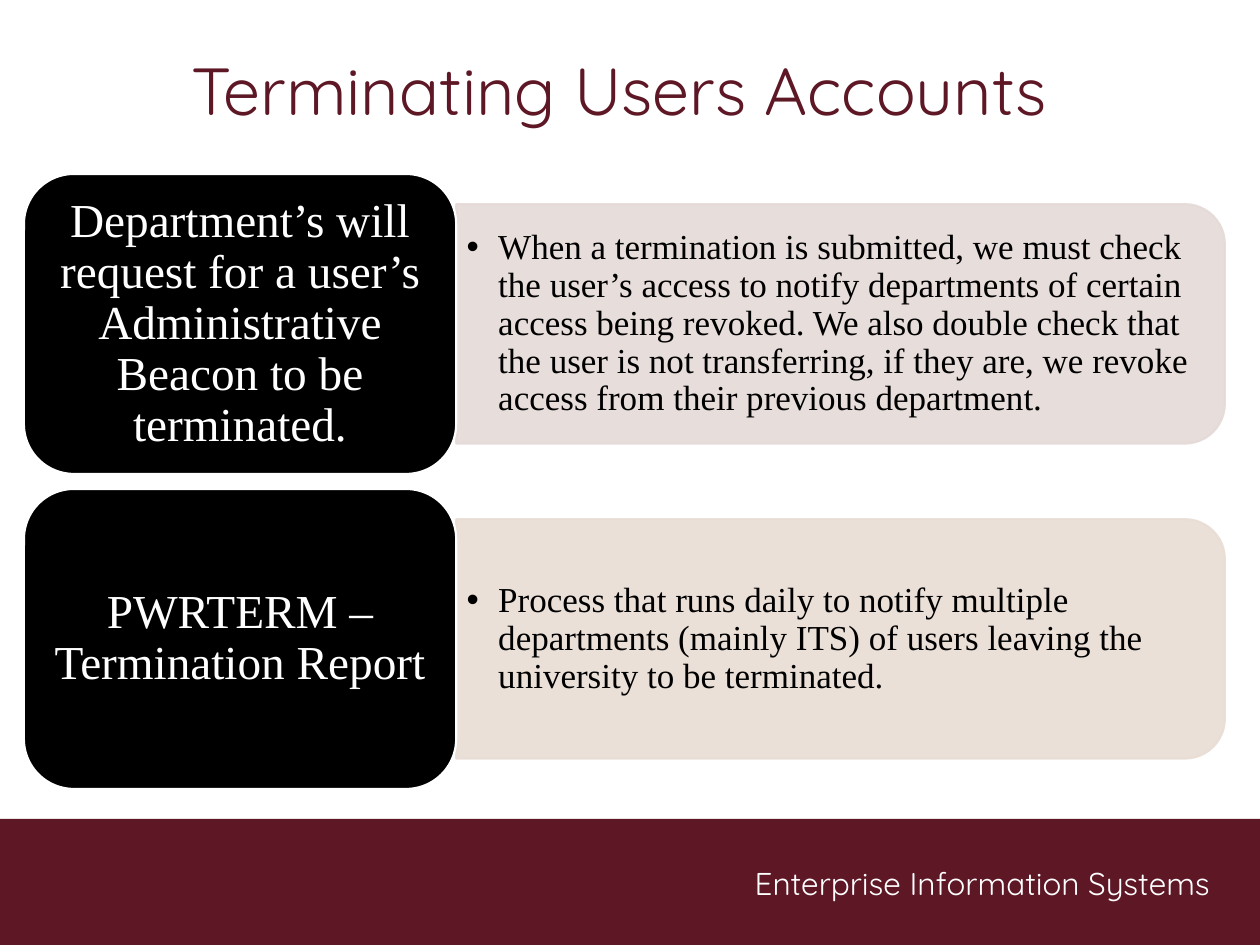
from lxml.etree import SubElement
from pptx import Presentation
from pptx.dml.color import RGBColor
from pptx.enum.shapes import MSO_SHAPE
from pptx.enum.text import MSO_ANCHOR, MSO_AUTO_SIZE, PP_ALIGN
from pptx.oxml.ns import qn
from pptx.util import Pt

TITLE = "Terminating Users Accounts"
FOOTER = "Enterprise Information Systems"
ROWS = [
    ("Department’s will request for a user’s Administrative Beacon to be terminated.",
     "When a termination is submitted, we must check the user’s access to notify "
     "departments of certain access being revoked. We also double check that the user is "
     "not transferring, if they are, we revoke access from their previous department.",
     "E5DAD8"),
    ("PWRTERM – Termination Report",
     "Process that runs daily to notify multiple departments (mainly ITS) of users "
     "leaving the university to be terminated.",
     "E9DDD4"),
]
MAROON, WHITE, BLACK = "5D1725", "FFFFFF", "000000"
HEADING_FONT, BODY_FONT = "Quicksand", "Times New Roman"
CARD_LEFT, CARD_TOP, CARD_WIDTH, CARD_HEIGHT = 13.7, 99.4, 247, 171.4
ROW_PITCH = 180
PANEL_WIDTH, PANEL_HEIGHT = 439.2, 136.8
LIST_WIDTH, LIST_HEIGHT = 432.7, 123.8


def color(value):
    return RGBColor.from_string(value)


def place(shape, left, top, width, height):
    shape.left, shape.top = Pt(left), Pt(top)
    shape.width, shape.height = Pt(width), Pt(height)


def add_block(page, kind, bounds, fill, line=None):
    block = page.shapes.add_shape(kind, *map(Pt, bounds))
    block.shadow.inherit = False
    block.fill.solid()
    block.fill.fore_color.rgb = color(fill)
    if line:
        block.line.color.rgb = color(line)
        block.line.width = Pt(1.25)
    else:
        block.line.fill.background()
    return block


def write(shape, text, font, size, ink, align, margins=(7.2, 3.6), spacing=None):
    frame = shape.text_frame
    frame.text = text
    frame.word_wrap = True
    frame.auto_size = MSO_AUTO_SIZE.NONE
    frame.vertical_anchor = MSO_ANCHOR.MIDDLE
    frame.margin_left = frame.margin_right = Pt(margins[0])
    frame.margin_top = frame.margin_bottom = Pt(margins[1])
    para = frame.paragraphs[0]
    para.alignment = align
    para.space_before = Pt(0)
    if spacing:
        para.line_spacing = spacing
    for span in para.runs:
        span.font.name, span.font.size = font, Pt(size)
        span.font.color.rgb = color(ink)
    return para


def add_bullet(para):
    properties = para._p.get_or_add_pPr()
    properties.set("marL", str(Pt(18)))
    properties.set("indent", str(-Pt(18)))
    SubElement(properties, qn("a:buChar"), char="•")


def add_row(page, body, index, heading, detail, tint):
    top = CARD_TOP + index * ROW_PITCH
    middle = top + CARD_HEIGHT / 2
    panel_left = CARD_LEFT + CARD_WIDTH
    center = panel_left + PANEL_WIDTH / 2
    panel = add_block(
        page, MSO_SHAPE.ROUND_2_SAME_RECTANGLE,
        (center - PANEL_HEIGHT / 2, middle - PANEL_WIDTH / 2, PANEL_HEIGHT, PANEL_WIDTH),
        tint, tint)
    panel.rotation = 90
    for shade in panel.element.spPr.iter(qn("a:srgbClr")):
        SubElement(shade, qn("a:alpha"), val="90000")
    body.element.addprevious(panel.element)

    place(body, panel_left, middle - LIST_HEIGHT / 2, LIST_WIDTH, LIST_HEIGHT)
    add_bullet(write(body, detail, BODY_FONT, 20, BLACK, PP_ALIGN.LEFT, (6, 3), 0.9))

    card = add_block(page, MSO_SHAPE.ROUNDED_RECTANGLE,
                     (CARD_LEFT, top, CARD_WIDTH, CARD_HEIGHT), BLACK, WHITE)
    write(card, heading, BODY_FONT, 27, WHITE, PP_ALIGN.CENTER, (8, 4), 0.9)


def main():
    """Build the account termination slide."""
    deck = Presentation()
    deck.slide_width, deck.slide_height = Pt(720), Pt(540)
    page = deck.slides.add_slide(deck.slide_layouts.get_by_name("Two Content"))
    title, *bodies = list(page.placeholders)[:3]

    add_block(page, MSO_SHAPE.RECTANGLE, (0, 468, 720, 72), MAROON)
    footer = page.shapes.add_textbox(Pt(412), Pt(490), Pt(286.5), Pt(29))
    write(footer, FOOTER, HEADING_FONT, 18, WHITE, PP_ALIGN.RIGHT)

    place(title, 24, 21.6, 660, 58.3)
    write(title, TITLE, HEADING_FONT, 38, MAROON, PP_ALIGN.CENTER)

    for index, (body, row) in enumerate(zip(bodies, ROWS)):
        add_row(page, body, index, *row)
    deck.save("out.pptx")


if __name__ == "__main__":
    main()
